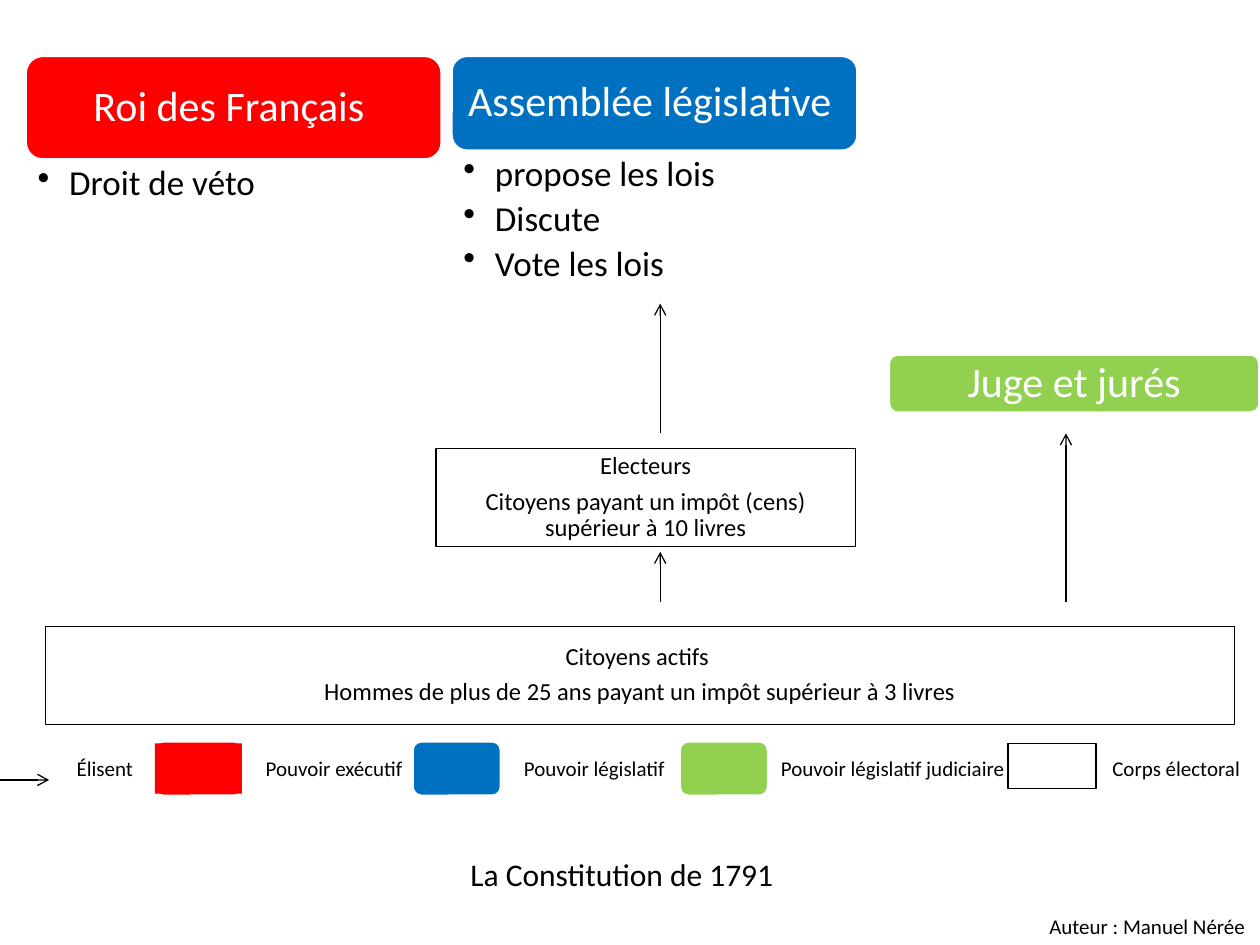
"""Build the slide on the powers set up by the Constitution of 1791."""
import pptx
import pptx.dml.color
import pptx.enum.shapes
import pptx.enum.text
import pptx.oxml.ns
import pptx.util
from lxml import etree

Inches = pptx.util.Inches
Pt = pptx.util.Pt
RGBColor = pptx.dml.color.RGBColor
SHAPE = pptx.enum.shapes.MSO_SHAPE
ALIGN = pptx.enum.text.PP_ALIGN
ANCHOR = pptx.enum.text.MSO_ANCHOR
qn = pptx.oxml.ns.qn

BLACK = RGBColor(0x00, 0x00, 0x00)
WHITE = RGBColor(0xFF, 0xFF, 0xFF)
EXECUTIVE = RGBColor(0xFF, 0x00, 0x00)
LEGISLATIVE = RGBColor(0x00, 0x70, 0xC0)
JUDICIAL = RGBColor(0x92, 0xD0, 0x50)

POWERS = [
    ("Roi des Français ", EXECUTIVE, (0.2, 0.44, 3.31, 0.83)),
    ("Assemblée législative ", LEGISLATIVE, (3.58, 0.44, 3.23, 0.76)),
    ("Juge et jurés", JUDICIAL, (7.05, 2.81, 2.95, 0.47)),
]
ROLES = [
    (["Droit de véto"], (0.2, 1.28, 3.31, 0.89)),
    (["propose les lois", "Discute", "Vote les lois"], (3.58, 1.21, 3.23, 1.12)),
]
VOTERS = [
    (["Citoyens actifs ",
      "Hommes de plus de 25 ans payant un impôt supérieur à 3 livres"],
     (0.36, 4.97, 9.44, 0.78)),
    (["Electeurs", "Citoyens payant un impôt (cens) supérieur à 10 livres"],
     (3.46, 3.56, 3.33, 0.78)),
]
ELECTS = [
    ((5.24, 4.78), (5.24, 4.38)),
    ((5.24, 3.44), (5.24, 2.41)),
    ((8.46, 4.78), (8.46, 3.44)),
    ((0, 6.19), (0.39, 6.19)),
]
LEGEND_SWATCHES = [(1.22, EXECUTIVE), (3.27, LEGISLATIVE), (5.39, JUDICIAL)]
LEGEND_LABELS = [
    ("Élisent", 0.51, 0.69),
    ("Pouvoir exécutif", 2.01, 1.34),
    ("Pouvoir législatif", 4.06, 1.41),
    ("Pouvoir législatif judiciaire", 6.1, 2.03),
    ("Corps électoral", 8.73, 1.27),
]
TITLE = ("La Constitution de 1791 ", (2.8, 6.74, 4.33, 0.4))
AUTHOR = ("Auteur : Manuel Nérée", (8.23, 7.2, 1.77, 0.3))


def add_box(slide, kind, place, fill=None, line=None, width=0.75):
    box = slide.shapes.add_shape(kind, *map(Inches, place))
    box.shadow.inherit = False
    if fill is None:
        box.fill.background()
    else:
        box.fill.solid()
        box.fill.fore_color.rgb = fill
    if line is None:
        box.line.fill.background()
    else:
        box.line.color.rgb = line
        box.line.width = Pt(width)
    return box


def add_power(slide, place, color):
    return add_box(slide, SHAPE.ROUNDED_RECTANGLE, place, color, WHITE, 2)


def add_bullet(paragraph):
    paragraph.level = 1
    props = paragraph._p.get_or_add_pPr()
    props.set("marL", str(Inches(0.25)))
    props.set("indent", str(-Inches(0.25)))
    etree.SubElement(props, qn("a:buChar"), char="•")


def write(shape, lines, size, color=BLACK, align=None, gap=None, bullets=False):
    frame = shape.text_frame
    frame.text = "\n".join(lines)
    for paragraph in frame.paragraphs:
        if gap is not None:
            paragraph.line_spacing = 0.9
            paragraph.space_after = Pt(gap)
        if bullets:
            add_bullet(paragraph)
        paragraph.alignment = align
        paragraph.font.size = Pt(size)
        paragraph.font.name = "Calibri"
        paragraph.font.color.rgb = color
    return frame


def set_margins(frame, left, top, right, bottom):
    frame.margin_left, frame.margin_top = Inches(left), Inches(top)
    frame.margin_right, frame.margin_bottom = Inches(right), Inches(bottom)


def write_centred(box, lines, size, color, gap):
    frame = write(box, lines, size, color, ALIGN.CENTER, gap)
    frame.word_wrap = True
    frame.vertical_anchor = ANCHOR.MIDDLE
    set_margins(frame, 0.1, 0.1, 0.1, 0.1)


def add_text(slide, lines, place, size, wrap=True, **style):
    label = slide.shapes.add_textbox(*map(Inches, place))
    frame = write(label, lines, size, **style)
    frame.word_wrap = wrap
    return frame


def add_arrow(slide, start, end):
    arrow = slide.shapes.add_connector(
        pptx.enum.shapes.MSO_CONNECTOR.STRAIGHT, *map(Inches, start + end))
    arrow.line.color.rgb = BLACK
    arrow.line.width = Pt(0.75)
    etree.SubElement(arrow.line._get_or_add_ln(), qn("a:tailEnd"), type="arrow")
    etree.SubElement(arrow._element.spPr, qn("a:effectLst"))


def main():
    deck = pptx.Presentation()
    deck.slide_width, deck.slide_height = Inches(10), Inches(7.5)
    slide = deck.slides.add_slide(deck.slide_layouts[6])

    for name, color, place in POWERS:
        write_centred(add_power(slide, place, color), [name], 24, WHITE, 8)
    for roles, place in ROLES:
        frame = add_text(slide, roles, place, 20, gap=4, bullets=True)
        set_margins(frame, 0.1, 0.03, 0.16, 0.03)
    for lines, place in VOTERS:
        box = add_box(slide, SHAPE.RECTANGLE, place, line=BLACK)
        write_centred(box, lines, 14, BLACK, 5)
    for start, end in ELECTS:
        add_arrow(slide, start, end)

    for left, color in LEGEND_SWATCHES:
        add_power(slide, (left, 5.88, 0.71, 0.44), color)
    add_box(slide, SHAPE.RECTANGLE, (1.23, 5.9, 0.69, 0.4), EXECUTIVE)
    add_box(slide, SHAPE.RECTANGLE, (8, 5.9, 0.7, 0.36), line=BLACK)
    for label, left, width in LEGEND_LABELS:
        add_text(slide, [label], (left, 5.95, width, 0.3), 12, wrap=False)

    title, title_place = TITLE
    add_text(slide, [title], title_place, 18, align=ALIGN.CENTER)
    author, author_place = AUTHOR
    add_text(slide, [author], author_place, 12)
    deck.save("out.pptx")


if __name__ == "__main__":
    main()
